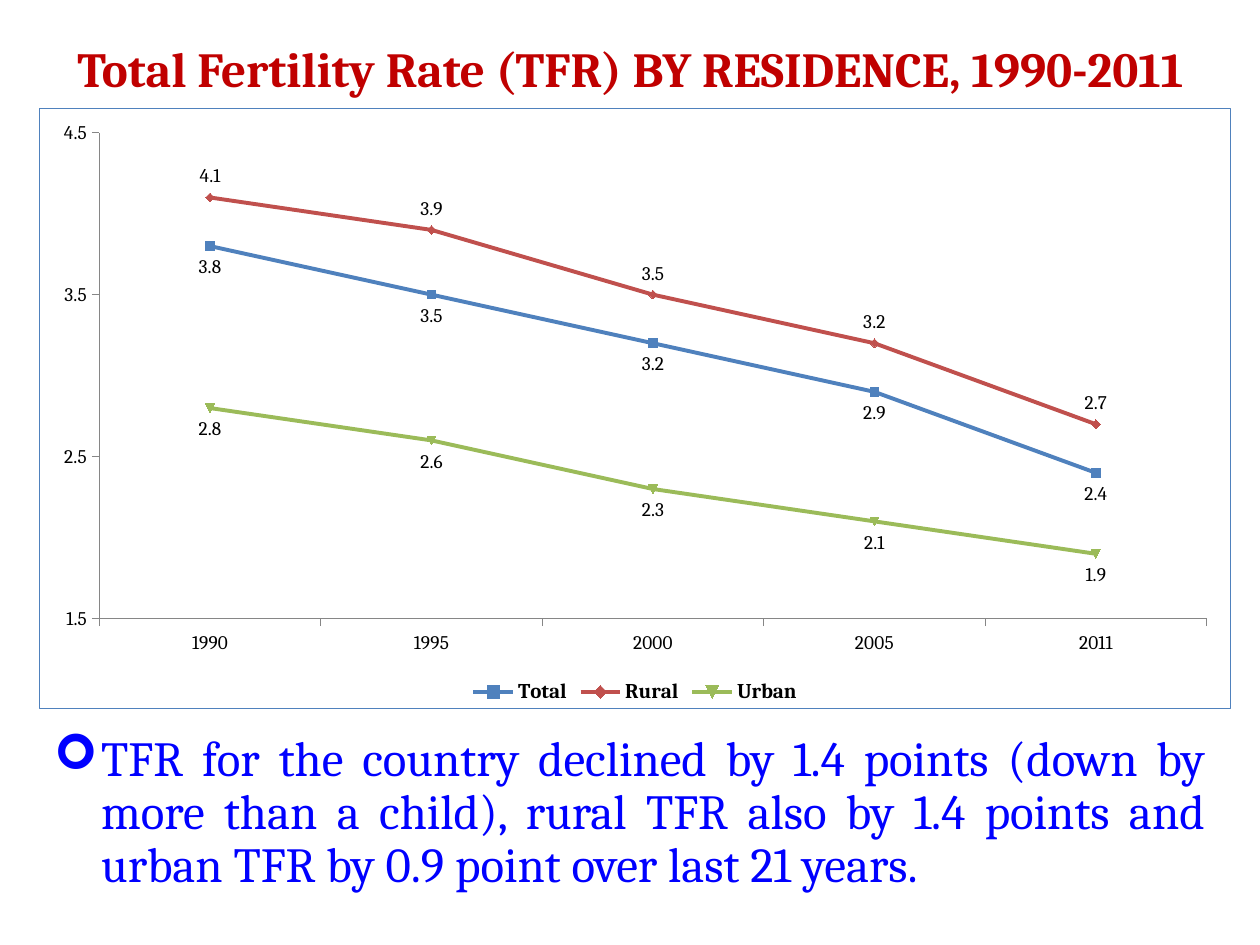
"""Build the slide on total fertility rate by residence."""
from dataclasses import dataclass

from pptx import Presentation, util as u
from pptx.chart.chart import Chart
from pptx.chart.data import CategoryChartData
from pptx.dml.color import RGBColor
from pptx.enum import chart as c, text as t
from pptx.oxml import parse_xml
from pptx.oxml.ns import nsdecls

COLORS = {
    "title": "C00000", "body": "0000FF", "text": "000000", "axis": "868686",
    "border": "4F81BD", "total": "4F81BD", "rural": "C0504D", "urban": "9BBB59",
}
FONT = "Cambria"
YEARS = ["1990", "1995", "2000", "2005", "2011"]
PLOT_AREA = {"x": 0.05, "y": 0.04, "w": 0.93, "h": 0.81}


@dataclass
class Box:
    left: float
    top: float
    width: float
    height: float

    def lengths(self) -> list[u.Length]:
        return [u.Cm(value) for value in (self.left, self.top, self.width, self.height)]


@dataclass
class Residence:
    name: str
    rates: list[float]
    label_position: c.XL_LABEL_POSITION

    @property
    def color(self) -> RGBColor:
        return rgb(self.name.lower())


RESIDENCES = [
    Residence("Total", [3.8, 3.5, 3.2, 2.9, 2.4], c.XL_LABEL_POSITION.BELOW),
    Residence("Rural", [4.1, 3.9, 3.5, 3.2, 2.7], c.XL_LABEL_POSITION.ABOVE),
    Residence("Urban", [2.8, 2.6, 2.3, 2.1, 1.9], c.XL_LABEL_POSITION.BELOW),
]


def rgb(name: str) -> RGBColor:
    return RGBColor.from_string(COLORS[name])


def set_font(font, size: float, color: str, bold: bool = False) -> None:
    font.name, font.size, font.bold = FONT, u.Pt(size), bold
    font.color.rgb = rgb(color)


def write_text(shape, wording: str, color: str, alignment: t.PP_ALIGN, bold: bool = False):
    frame = shape.text_frame
    frame.word_wrap = True
    frame.auto_size = t.MSO_AUTO_SIZE.NONE
    frame.vertical_anchor = t.MSO_ANCHOR.TOP
    paragraph = frame.paragraphs[0]
    paragraph.alignment = alignment
    run = paragraph.add_run()
    run.text = wording
    set_font(run.font, 28, color, bold)
    return paragraph


def add_title(slide, box: Box) -> None:
    title = slide.shapes.title
    title.left, title.top, title.width, title.height = box.lengths()
    write_text(title, "Total Fertility Rate (TFR) BY RESIDENCE, 1990-2011",
               "title", t.PP_ALIGN.CENTER, bold=True)


def add_finding(slide, box: Box) -> None:
    shape = slide.shapes.add_textbox(*box.lengths())
    paragraph = write_text(
        shape,
        "TFR for the country declined by 1.4 points (down by more than a child), "
        "rural TFR also by 1.4 points and urban TFR by 0.9 point over last 21 years.",
        "body", t.PP_ALIGN.JUSTIFY)
    paragraph.line_spacing = 0.9
    paragraph.space_before = u.Pt(5.6)
    properties = paragraph._p.get_or_add_pPr()
    indent = u.Cm(0.95)
    properties.set("marL", str(indent))
    properties.set("indent", str(-indent))
    for bullet in (f'<a:buClr {nsdecls("a")}><a:srgbClr val="{COLORS["body"]}"/></a:buClr>',
                   f'<a:buFont {nsdecls("a")} typeface="Wingdings"/>',
                   f'<a:buChar {nsdecls("a")} char="➢"/>'):
        properties.append(parse_xml(bullet))


def format_axes(chart: Chart) -> None:
    for axis in (chart.category_axis, chart.value_axis):
        axis.has_major_gridlines = False
        axis.major_tick_mark = c.XL_TICK_MARK.OUTSIDE
        axis.minor_tick_mark = c.XL_TICK_MARK.NONE
        axis.format.line.color.rgb = rgb("axis")
        axis.format.line.width = u.Pt(0.75)
        set_font(axis.tick_labels.font, 11, "text")
    value_axis = chart.value_axis
    value_axis.minimum_scale, value_axis.maximum_scale = 1.5, 4.5
    value_axis.major_unit = 1
    value_axis.tick_labels.number_format = "0.0"
    value_axis.tick_labels.number_format_is_linked = False


def format_series(series, residence: Residence) -> None:
    series.smooth = False
    series.format.line.color.rgb = residence.color
    series.format.line.width = u.Pt(2.25)
    marker = series.marker
    marker.size = 5
    marker.format.fill.solid()
    marker.format.fill.fore_color.rgb = residence.color
    marker.format.line.color.rgb = residence.color
    labels = series.data_labels
    labels.show_value = True
    labels.position = residence.label_position
    labels.number_format = "0.0"
    labels.number_format_is_linked = False
    set_font(labels.font, 11, "text")


def place_plot(chart: Chart) -> None:
    parts = "".join(f'<c:{key}Mode val="edge"/>' for key in "xy")
    parts += "".join(f'<c:{key} val="{value}"/>' for key, value in PLOT_AREA.items())
    plot_area = chart._chartSpace.chart.plotArea
    for layout in plot_area.findall("{*}layout"):
        plot_area.remove(layout)
    plot_area.insert(0, parse_xml(
        f'<c:layout {nsdecls("c")}><c:manualLayout><c:layoutTarget val="inner"/>'
        f'{parts}</c:manualLayout></c:layout>'))


def add_border(chart: Chart) -> None:
    chart._chartSpace.chart.addnext(parse_xml(
        f'<c:spPr {nsdecls("c", "a")}><a:noFill/><a:ln w="{u.Pt(0.75)}"><a:solidFill>'
        f'<a:srgbClr val="{COLORS["border"]}"/></a:solidFill></a:ln></c:spPr>'))


def add_fertility_chart(slide, box: Box) -> None:
    data = CategoryChartData(number_format="0.0")
    data.categories = YEARS
    for residence in RESIDENCES:
        data.add_series(residence.name, residence.rates)
    chart = slide.shapes.add_chart(c.XL_CHART_TYPE.LINE_MARKERS, *box.lengths(), data).chart
    chart.has_title = False
    chart.font.name, chart.font.size = "Calibri", u.Pt(10)
    chart.font.color.rgb = rgb("text")
    chart.has_legend = True
    chart.legend.position = c.XL_LEGEND_POSITION.BOTTOM
    chart.legend.include_in_layout = False
    set_font(chart.legend.font, 12, "text", bold=True)
    chart.plots[0].vary_by_categories = False
    format_axes(chart)
    for series, residence in zip(chart.plots[0].series, RESIDENCES):
        format_series(series, residence)
    place_plot(chart)
    add_border(chart)


def main() -> None:
    presentation = Presentation()
    presentation.slide_width, presentation.slide_height = u.Cm(25.4), u.Cm(19.05)
    slide = presentation.slides.add_slide(presentation.slide_layouts.get_by_name("Title Only"))
    add_fertility_chart(slide, Box(0.79, 2.18, 24.03, 12.12))
    add_title(slide, Box(0.64, 0.64, 24.13, 1.27))
    add_finding(slide, Box(0.84, 14.68, 23.7, 3.73))
    presentation.save("out.pptx")


if __name__ == "__main__":
    main()
